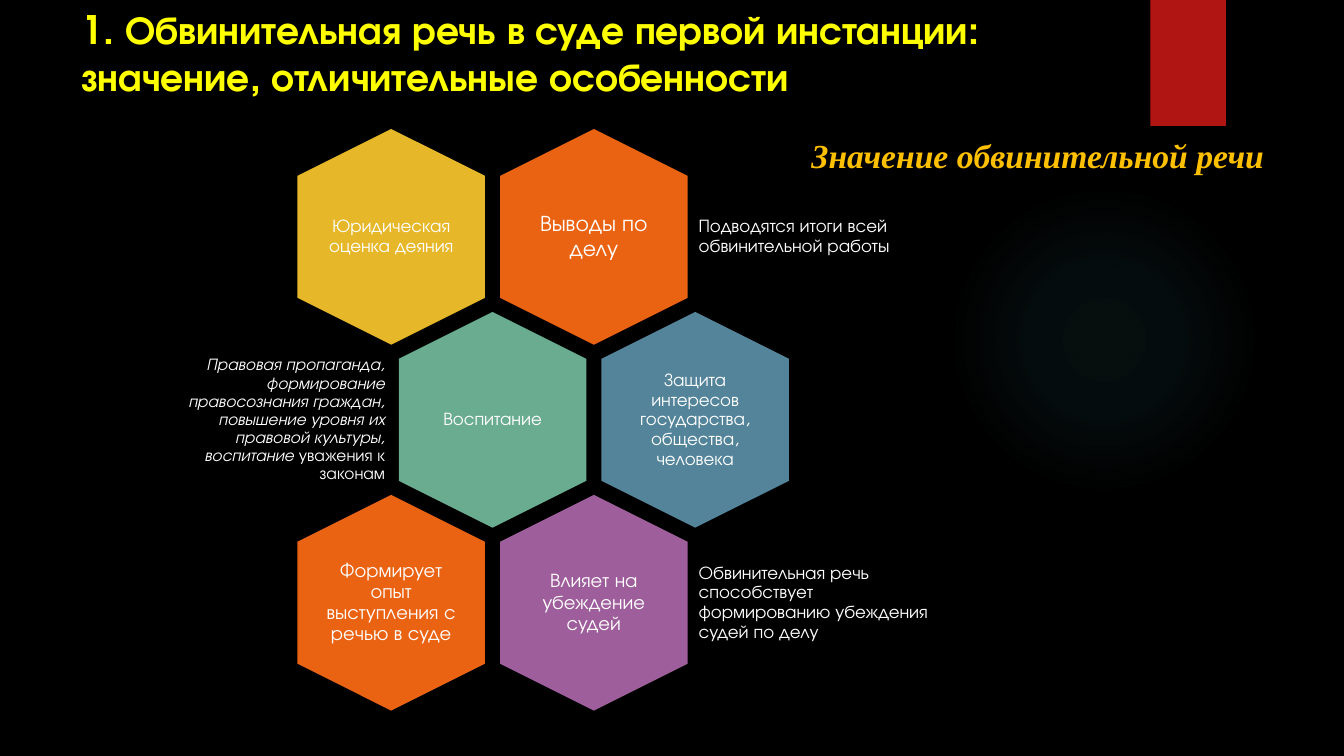
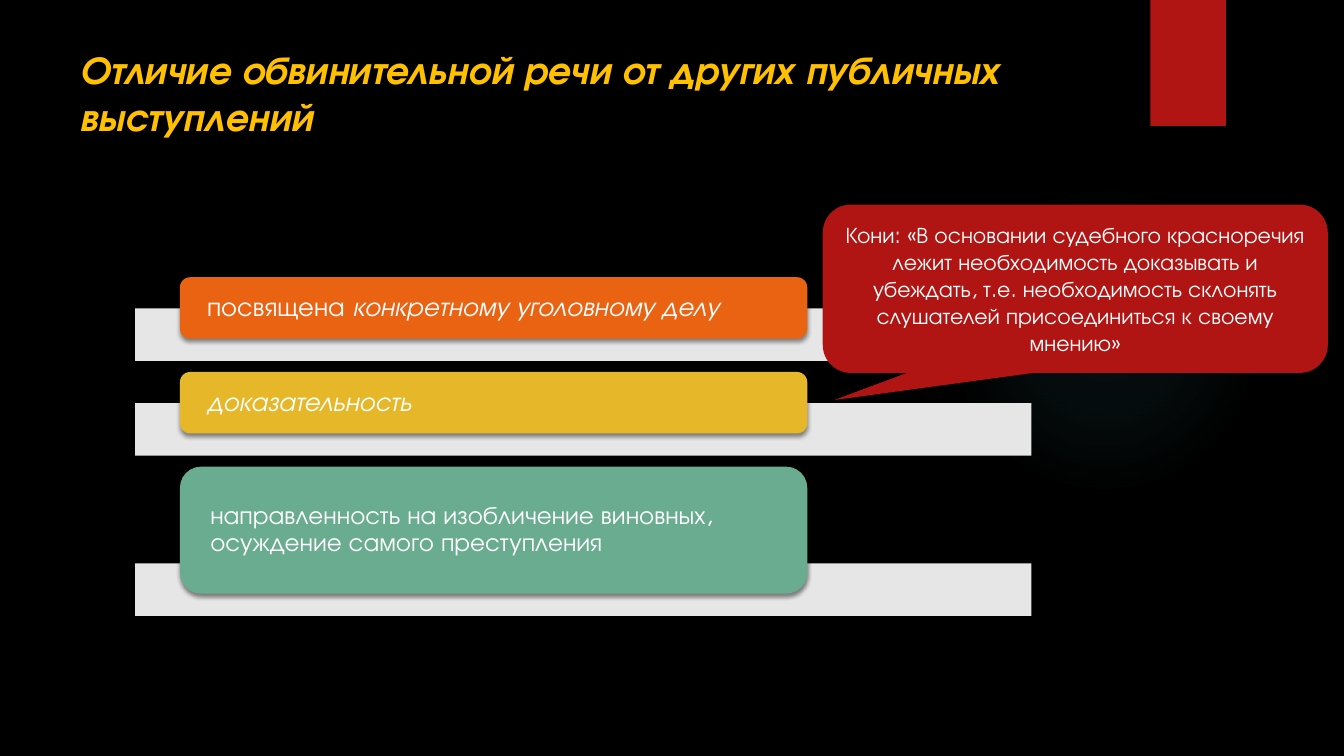
from lxml import etree
from pptx import Presentation
from pptx.dml.color import RGBColor
from pptx.enum.shapes import MSO_SHAPE as Shape
from pptx.enum.text import MSO_ANCHOR as Anchor, PP_ALIGN as Align
from pptx.oxml import parse_xml
from pptx.oxml.ns import nsdecls, qn
from pptx.util import Inches, Pt

FONT = "TeX Gyre Adventor"
SERIF = "Times New Roman"
BLACK, WHITE, RED = "000000", "FFFFFF", "B01513"
ORANGE, GOLD, GREEN = "EA6312", "E6B729", "6AAC90"
BLUE, PURPLE, TEAL = "54849A", "9E5E9B", "50B9C1"
YELLOW, AMBER = "FFFF00", "FFC000"


def color(value):
    return RGBColor.from_string(value)


def add_shape(page, kind, box, fill, shadow=False):
    shape = page.shapes.add_shape(kind, *map(Inches, box))
    shape.fill.solid()
    shape.fill.fore_color.rgb = color(fill)
    shape.line.fill.background()
    shape.shadow.inherit = False
    if shadow:
        effects = shape._element.spPr.find(qn("a:effectLst"))
        effects.append(parse_xml(
            f'<a:outerShdw {nsdecls("a")} blurRad="38100" dist="25400" dir="5400000" '
            f'rotWithShape="0"><a:srgbClr val="{BLACK}"><a:alpha val="45000"/>'
            '</a:srgbClr></a:outerShdw>'))
    return shape


def write(shape, runs, size, tint=WHITE, align=Align.LEFT, anchor=Anchor.MIDDLE,
          insets=(0.1, 0.05), spacing=None, font=FONT, bold=False, wrap=True):
    """Fill a shape with one paragraph; runs are (text, italic) pairs."""
    frame = shape.text_frame
    frame.word_wrap = wrap
    frame.vertical_anchor = anchor
    frame.margin_left = frame.margin_right = Inches(insets[0])
    frame.margin_top = frame.margin_bottom = Inches(insets[1])
    para = frame.paragraphs[0]
    para.alignment = align
    if spacing:
        para.line_spacing = spacing
    for text, italic in runs:
        span = para.add_run()
        span.text = text
        span.font.name, span.font.size = font, Pt(size)
        span.font.bold, span.font.italic = bold, italic
        span.font.color.rgb = color(tint)


def add_text(page, box, runs, size, **style):
    write(page.shapes.add_textbox(*map(Inches, box)), runs, size, **style)


# Shared backdrop and title
def add_glow(page, box):
    glow = add_shape(page, Shape.OVAL, box, TEAL)
    stops = "".join(
        f'<a:gs pos="{pos}000"><a:srgbClr val="{TEAL}"><a:alpha val="{alpha}000"/>'
        '</a:srgbClr></a:gs>' for pos, alpha in ((0, 7), (36, 6), (69, 0)))
    gradient = parse_xml(
        f'<a:gradFill {nsdecls("a")}><a:gsLst>{stops}</a:gsLst><a:path path="circle">'
        '<a:fillToRect l="50000" t="50000" r="50000" b="50000"/></a:path></a:gradFill>')
    props = glow._element.spPr
    props.replace(props.find(qn("a:solidFill")), gradient)


def add_page(deck, title, box, tint, italic=False):
    page = deck.slides.add_slide(deck.slide_layouts[6])
    page.background.fill.solid()
    page.background.fill.fore_color.rgb = color(BLACK)
    add_glow(page, (9.41, 1.83, 3.08, 3.08))
    add_shape(page, Shape.RECTANGLE, (11.41, 0, 0.75, 1.25), RED, shadow=True)
    add_text(page, box, [(title, italic)], 28, tint=tint, anchor=Anchor.TOP, bold=True)
    return page


# Honeycomb: rows of two hexagons, the middle row shifted by half a step
CELLS = [
    (0, 0, GOLD, 13, "Юридическая оценка деяния"),
    (0, 1, ORANGE, 16, "Выводы по делу"),
    (1, 0, GREEN, 13, "Воспитание"),
    (1, 1, BLUE, 13, "Защита интересов государства, общества, человека"),
    (2, 0, ORANGE, 14, "Формирует опыт выступления с речью в суде"),
    (2, 1, PURPLE, 14, "Влияет на убеждение судей"),
]
# Row, left edge from the honeycomb, width, alignment, size, runs
NOTES = [
    (0, 4.94, 2.39, Align.LEFT, 13,
     [("Подводятся итоги всей обвинительной работы", False)]),
    (1, -0.38, 2.31, Align.RIGHT, 12,
     [("Правовая пропаганда, формирование правосознания граждан, повышение уровня "
       "их правовой культуры, воспитание", True), (" уважения к законам", False)]),
    (2, 4.94, 2.39, Align.LEFT, 13,
     [("Обвинительная речь способствует формированию убеждения судей по делу", False)]),
]


def add_honeycomb(page, left, top):
    long_side, short_side = 2.14, 1.86
    step_x, step_y = 2.01, 1.815
    text_w, text_h, note_h = 1.3, 1.47, 1.28

    def middle_of(row):
        return top + long_side / 2 + row * step_y

    for row, column, fill, size, text in CELLS:
        center = left + short_side / 2 + (column + row % 2 / 2) * step_x
        middle = middle_of(row)
        cell = add_shape(page, Shape.HEXAGON,
                         (center - long_side / 2, middle - short_side / 2,
                          long_side, short_side), fill, shadow=True)
        cell.adjustments[0] = 0.25
        cell.rotation = 90
        add_text(page, (center - text_w / 2, middle - text_h / 2, text_w, text_h),
                 [(text, False)], size, align=Align.CENTER, insets=(0, 0), spacing=0.9)
    for row, offset, width, align, size, runs in NOTES:
        add_text(page, (left + offset - 1.01, middle_of(row) - note_h / 2, width, note_h),
                 runs, size, align=align, insets=(0.05, 0.05), spacing=0.9)


# Stacked cards, each resting on a pale bar
CARDS = [
    (0.61, ORANGE, 19, [("посвящена ", False), ("конкретному уголовному делу", True)]),
    (0.61, GOLD, 19, [("доказательность", True)]),
    (1.26, GREEN, 18,
     [("направленность на изобличение виновных, осуждение самого преступления", False)]),
]


def add_cards(page, left, top, width):
    bar_h, overlap, gap = 0.52, 0.3, 0.11
    for height, fill, size, runs in CARDS:
        bar_top = top + height - overlap
        bar = add_shape(page, Shape.RECTANGLE, (left, bar_top, width, bar_h), WHITE)
        tone = bar._element.spPr.find(qn("a:solidFill"))[0]
        etree.SubElement(tone, qn("a:alpha"), val="90000")
        card = add_shape(page, Shape.ROUNDED_RECTANGLE,
                         (left + width * 0.05, top, width * 0.7, height), fill, shadow=True)
        write(card, runs, size, insets=(0.24, 0), spacing=0.9)
        top = bar_top + bar_h + gap


def add_quote(page, box, text):
    quote = add_shape(page, Shape.ROUNDED_RECTANGULAR_CALLOUT, box, RED)
    for index, value in enumerate((-0.477, 0.661, 0.167)):
        quote.adjustments[index] = value
    write(quote, [(text, False)], 16, align=Align.CENTER)


def main():
    deck = Presentation()
    deck.slide_width, deck.slide_height = Inches(13.33), Inches(7.5)

    meaning = add_page(
        deck, "1. Обвинительная речь в суде первой инстанции: значение, "
        "отличительные особенности", (0.71, 0, 10.29, 1.11), YELLOW)
    add_honeycomb(meaning, 2.95, 1.28)
    add_text(meaning, (7.95, 1.29, 4.74, 0.5), [("Значение обвинительной речи", True)], 24,
             tint=AMBER, anchor=Anchor.TOP, font=SERIF, bold=True, wrap=False)

    difference = add_page(
        deck, "Отличие обвинительной речи от других публичных выступлений",
        (0.69, 0.4, 10.29, 1.53), AMBER, italic=True)
    add_cards(difference, 1.34, 2.75, 8.89)
    add_quote(difference, (8.16, 2.03, 5.01, 1.67),
              "Кони: «В основании судебного красноречия лежит необходимость доказывать "
              "и убеждать, т.е. необходимость склонять слушателей присоединиться к "
              "своему мнению»")

    deck.save("out.pptx")


if __name__ == "__main__":
    main()
